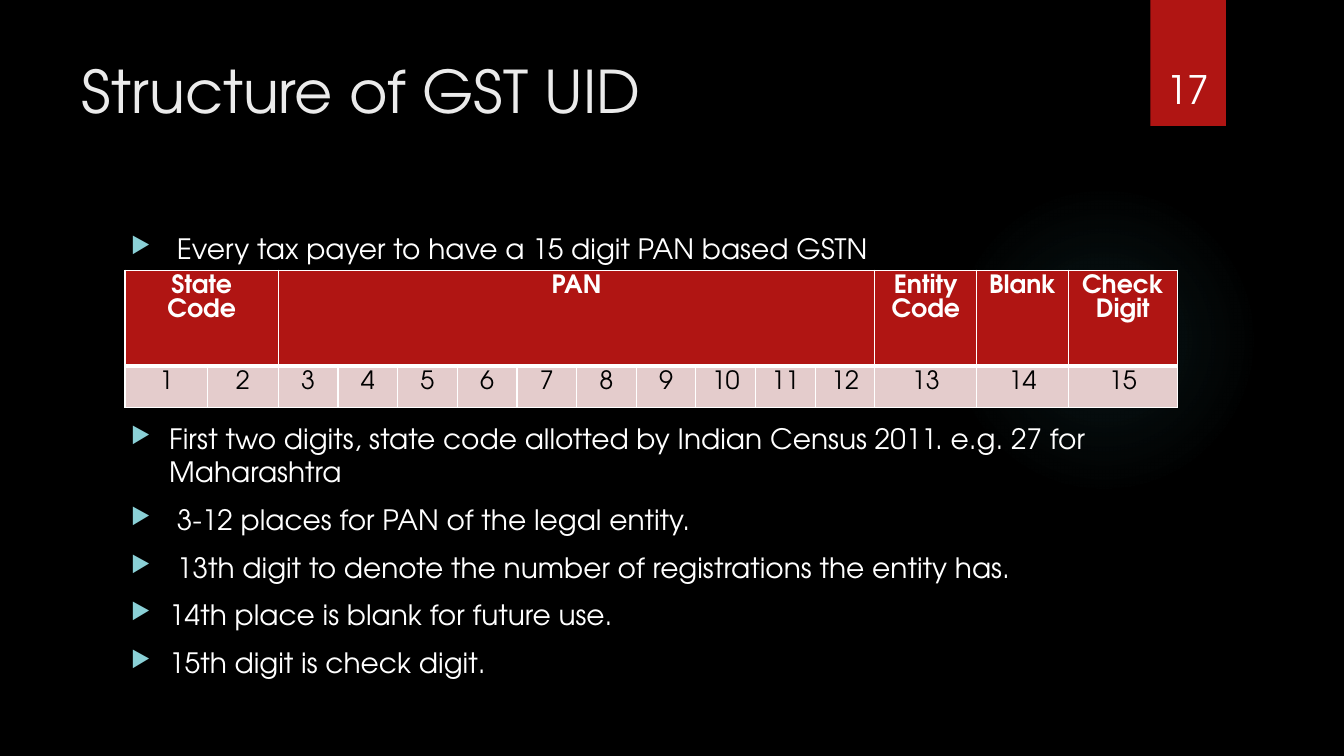
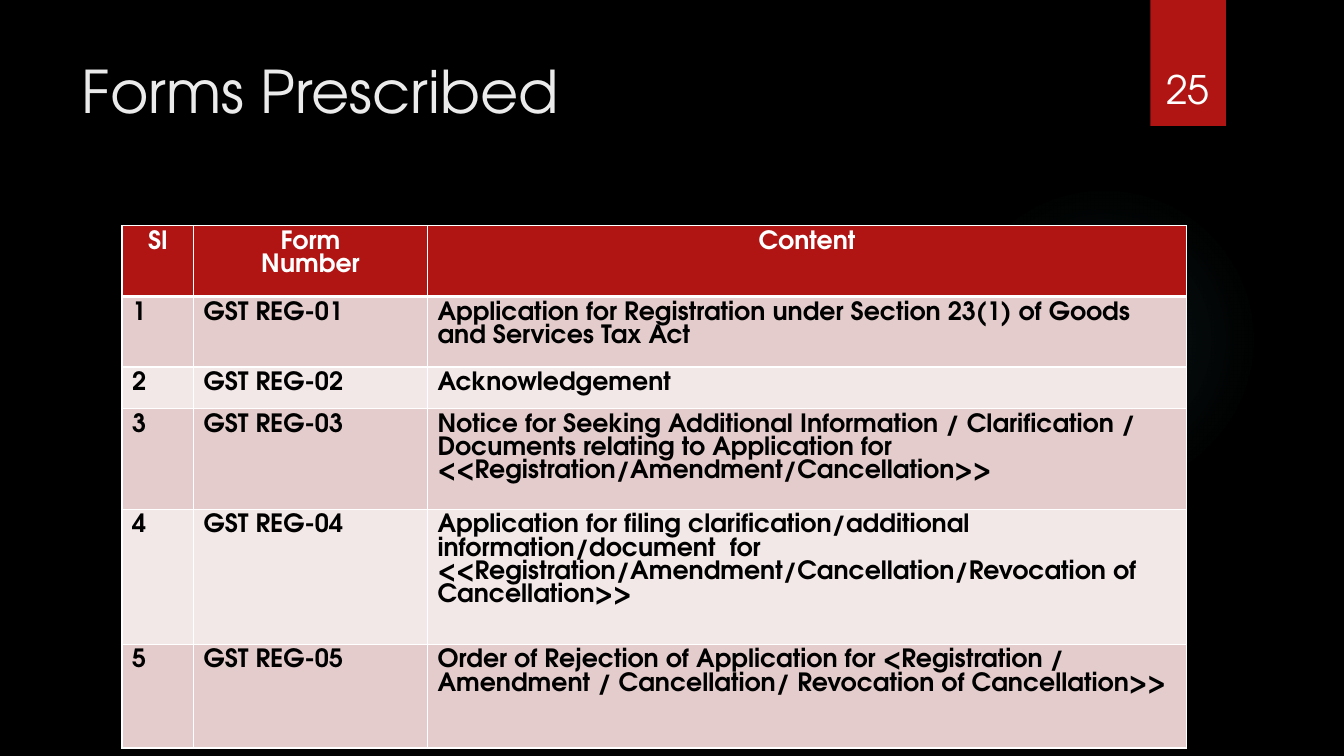
from dataclasses import dataclass

from pptx import Presentation
from pptx.dml.color import RGBColor
from pptx.enum import shapes, text
from pptx.oxml import parse_xml
from pptx.oxml.ns import nsdecls
from pptx.util import Inches, Pt

FONT, BULLET_FONT = "TeX Gyre Adventor", "OpenSymbol"
BLACK, WHITE, TITLE = "000000", "FFFFFF", "EBEBEB"
RED, TEAL, BULLET = "B01513", "50B9C1", "8AD0D6"
BANDS = ("E4CCCC", "F2E8E7")
LEFT, CENTER = text.PP_ALIGN.LEFT, text.PP_ALIGN.CENTER


@dataclass(frozen=True)
class Box:
    left: float
    top: float
    width: float
    height: float

    def lengths(self) -> tuple:
        return tuple(Inches(v) for v in (self.left, self.top, self.width, self.height))


@dataclass(frozen=True)
class Header:
    label: str
    span: int = 1


@dataclass(frozen=True)
class Grid:
    left: float
    top: float
    cols: list[float]
    rows: list[float]
    headers: list[Header]
    body: list[list[str]]
    body_bold: bool
    body_align: int


GLOW = Box(9.41, 1.83, 3.08, 3.08)
BAND = Box(11.41, 0, 0.75, 1.25)
TITLE_BOX = Box(0.71, 0.49, 10.29, 1.53)
NUMBER_BOX = Box(11.32, 0.32, 0.92, 0.84)

UID_GRID = Grid(
    1.24, 2.68,
    [0.82, 0.7] + [5.92 / 10] * 10 + [1.01, 0.91, 1.08],
    [0.95, 0.41],
    [Header("State Code", 2), Header("PAN", 10), Header("Entity Code"),
     Header("Blank"), Header("Check Digit")],
    [[str(n) for n in range(1, 16)]],
    False, CENTER,
)

FORM_CONTENTS = [
    "Application for Registration under Section 23(1) of Goods\nand Services Tax Act",
    "Acknowledgement",
    "Notice for Seeking Additional Information / Clarification /\n"
    "Documents relating to Application for <<Registration/Amendment/Cancellation>>",
    "Application for filing clarification/additional information/document  for\n"
    "<<Registration/Amendment/Cancellation/Revocation of\nCancellation>>",
    "Order of Rejection of Application for <Registration /\n"
    "Amendment / Cancellation/ Revocation of Cancellation>>",
]

FORMS_GRID = Grid(
    1.21, 2.24,
    [0.71, 2.32, 7.53],
    [0.7, 0.7, 0.41, 1, 1.34, 1.03],
    [Header("Sl"), Header("Form\nNumber"), Header("Content")],
    [[str(n), f"GST REG-{n:02}", content] for n, content in enumerate(FORM_CONTENTS, 1)],
    True, LEFT,
)

INTRO = [" Every tax payer to have a 15 digit PAN based GSTN"]
DIGIT_NOTES = [
    "First two digits, state code allotted by Indian Census 2011. e.g. 27 for Maharashtra",
    " 3-12 places for PAN of the legal entity.",
    " 13th digit to denote the number of registrations the entity has.",
    "14th place is blank for future use.",
    "15th digit is check digit.",
]


def rgb(value: str) -> RGBColor:
    return RGBColor.from_string(value)


def style(p, size: float, color: str, bold: bool = False, align=LEFT) -> None:
    p.alignment = align
    for r in p.runs:
        r.font.name = FONT
        r.font.size = Pt(size)
        r.font.bold = bold
        r.font.color.rgb = rgb(color)


def add_backdrop(slide, kind, box: Box, position: int):
    sp = slide.shapes.add_shape(kind, *box.lengths())
    sp.shadow.inherit = False
    sp.line.fill.background()
    sp.fill.solid()
    sp.fill.fore_color.rgb = rgb(RED)
    slide.shapes._spTree.insert(position, sp._element)
    return sp


def add_glow(slide) -> None:
    sp = add_backdrop(slide, shapes.MSO_SHAPE.OVAL, GLOW, 2)
    stops = "".join(
        f'<a:gs pos="{pos * 1000}"><a:srgbClr val="{TEAL}">'
        f'<a:alpha val="{alpha * 1000}"/></a:srgbClr></a:gs>'
        for pos, alpha in ((0, 7), (36, 6), (69, 0))
    )
    gradient = parse_xml(
        f'<a:gradFill {nsdecls("a")} rotWithShape="1"><a:gsLst>{stops}</a:gsLst>'
        '<a:path path="circle"><a:fillToRect l="50000" t="50000" r="50000" b="50000"/>'
        "</a:path></a:gradFill>"
    )
    spPr = sp._element.spPr
    spPr.replace(spPr.solidFill, gradient)


def add_slide(prs, title: str, number: int):
    slide = prs.slides.add_slide(prs.slide_layouts[5])
    add_glow(slide)
    add_backdrop(slide, shapes.MSO_SHAPE.RECTANGLE, BAND, 3)
    sp = slide.shapes.title
    sp.left, sp.top, sp.width, sp.height = TITLE_BOX.lengths()
    tf = sp.text_frame
    tf.text = title
    tf.auto_size = text.MSO_AUTO_SIZE.NONE
    tf.vertical_anchor = text.MSO_ANCHOR.TOP
    style(tf.paragraphs[0], 42, TITLE)
    tf = slide.shapes.add_textbox(*NUMBER_BOX.lengths()).text_frame
    tf.word_wrap = True
    tf.vertical_anchor = text.MSO_ANCHOR.BOTTOM
    tf.text = str(number)
    style(tf.paragraphs[0], 28, WHITE, align=CENTER)
    return slide


def add_bullets(slide, box: Box, lines: list[str]) -> None:
    tf = slide.shapes.add_textbox(*box.lengths()).text_frame
    tf.word_wrap = True
    tf.text = "\n".join(lines)
    for i, p in enumerate(tf.paragraphs):
        pPr = p._p.get_or_add_pPr()
        pPr.set("marL", str(Inches(0.38)))
        pPr.set("indent", str(-Inches(0.38)))
        for xml in (
            f'<a:buClr {nsdecls("a")}><a:srgbClr val="{BULLET}"/></a:buClr>',
            f'<a:buSzPct {nsdecls("a")} val="80000"/>',
            f'<a:buFont {nsdecls("a")} typeface="{BULLET_FONT}"/>',
            f'<a:buChar {nsdecls("a")} char="▶"/>',
        ):
            pPr.append(parse_xml(xml))
        if i:
            p.space_before = Pt(10)
        style(p, 20, WHITE)


def format_cell(cell, row: int, grid: Grid) -> None:
    head = row == 0
    tcPr = cell._tc.get_or_add_tcPr()
    widths = {"L": 1, "R": 1, "T": 3 if row == 1 else 1, "B": 3 if head else 1}
    for side, width in widths.items():
        tcPr.append(parse_xml(
            f'<a:ln{side} {nsdecls("a")} w="{Pt(width)}"><a:solidFill>'
            f'<a:srgbClr val="{WHITE}"/></a:solidFill></a:ln{side}>'
        ))
    cell.fill.solid()
    cell.fill.fore_color.rgb = rgb(RED if head else BANDS[(row - 1) % 2])
    for p in cell.text_frame.paragraphs:
        style(p, 18, WHITE if head else BLACK, head or grid.body_bold,
              CENTER if head else grid.body_align)


def add_grid(slide, grid: Grid) -> None:
    box = Box(grid.left, grid.top, sum(grid.cols), sum(grid.rows))
    table = slide.shapes.add_table(len(grid.rows), len(grid.cols), *box.lengths()).table
    for col, width in zip(table.columns, grid.cols):
        col.width = Inches(width)
    for row, height in zip(table.rows, grid.rows):
        row.height = Inches(height)
    c = 0
    for header in grid.headers:
        cell = table.cell(0, c)
        cell.text_frame.text = header.label
        if header.span > 1:
            cell.merge(table.cell(0, c + header.span - 1))
        c += header.span
    for r, values in enumerate(grid.body, 1):
        for c, value in enumerate(values):
            table.cell(r, c).text_frame.text = value
    for r in range(len(grid.rows)):
        for c in range(len(grid.cols)):
            format_cell(table.cell(r, c), r, grid)


def main() -> None:
    prs = Presentation()
    prs.slide_width, prs.slide_height = Inches(13.33), Inches(7.5)
    fill = prs.slide_master.background.fill
    fill.solid()
    fill.fore_color.rgb = rgb(BLACK)

    slide = add_slide(prs, "Structure of GST UID", 17)
    add_bullets(slide, Box(1.2, 2.25, 9.78, 0.43), INTRO)
    add_bullets(slide, Box(1.2, 4.13, 9.78, 2.7), DIGIT_NOTES)
    add_grid(slide, UID_GRID)

    slide = add_slide(prs, "Forms Prescribed", 25)
    add_grid(slide, FORMS_GRID)

    prs.save("out.pptx")


if __name__ == "__main__":
    main()
